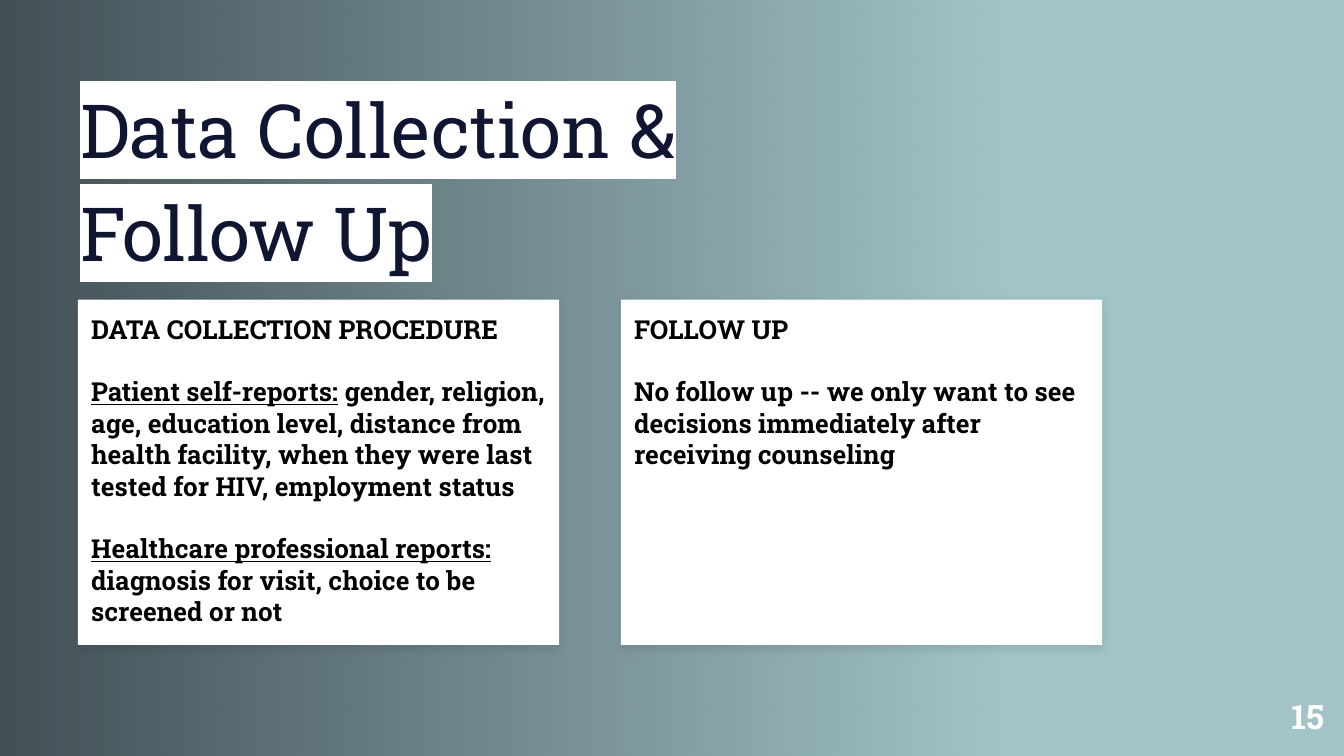
from dataclasses import dataclass

from lxml.etree import SubElement
from pptx import Presentation
from pptx.dml.color import RGBColor
from pptx.enum.shapes import MSO_SHAPE
from pptx.enum.text import MSO_ANCHOR, PP_ALIGN
from pptx.oxml import parse_xml
from pptx.oxml.ns import nsdecls, qn
from pptx.util import Inches, Pt


@dataclass(frozen=True)
class Theme:
    font: str = "Roboto Slab"
    background: str = "A2C4C9"
    shade: str = "000208"
    title: str = "101631"
    white: str = "FFFFFF"
    black: str = "000000"
    title_size: int = 40
    body_size: int = 14
    number_size: int = 18
    paragraph_gap: float = 16.8


theme = Theme()


def set_frame(sp, anchor):
    tf = sp.text_frame
    tf.word_wrap = True
    tf.vertical_anchor = anchor
    tf.margin_left = tf.margin_right = Inches(0.1)
    tf.margin_top = tf.margin_bottom = Inches(0.1)
    return tf


def add_run(p, text, size, color, bold=False, underline=False):
    r = p.add_run()
    r.text = text
    r.font.name = theme.font
    r.font.size = Pt(size)
    r.font.bold = bold
    r.font.underline = underline
    r.font.color.rgb = RGBColor.from_string(color)
    return r


prs = Presentation()
prs.slide_width = Inches(10)
prs.slide_height = Inches(10) * 9 // 16
s = prs.slides.add_slide(prs.slide_layouts[6])
s.background.fill.solid()
s.background.fill.fore_color.rgb = RGBColor.from_string(theme.background)

shade = s.shapes.add_shape(MSO_SHAPE.RECTANGLE, 0, 0, Inches(7.5), prs.slide_height)
shade.shadow.inherit = False
shade.line.fill.background()
shade.fill.gradient()
shade.fill.gradient_angle = 180
for stop in shade.fill.gradient_stops:
    stop.color.rgb = RGBColor.from_string(theme.shade)
for color, opacity in zip(shade.element.spPr.iter(qn("a:srgbClr")), (0, 60)):
    SubElement(color, qn("a:alpha"), val=str(opacity * 1000))

title = s.shapes.add_textbox(Inches(0.5), Inches(0.74), Inches(5), Inches(1.42))
p = set_frame(title, MSO_ANCHOR.BOTTOM).paragraphs[0]
p.line_spacing = 1.15
r = add_run(p, "Data Collection & Follow Up", theme.title_size, theme.title)
r._r.get_or_add_rPr().find(qn("a:solidFill")).addnext(parse_xml(
    f'<a:highlight {nsdecls("a")}><a:srgbClr val="{theme.white}"/></a:highlight>'))

number = s.shapes.add_textbox(Inches(9.38), Inches(5.02), Inches(0.57), Inches(0.61))
p = set_frame(number, MSO_ANCHOR.MIDDLE).paragraphs[0]
p.alignment = PP_ALIGN.RIGHT
add_run(p, "15", theme.number_size, theme.white, bold=True)

cards = [
    [
        ("", "DATA COLLECTION PROCEDURE"),
        ("Patient self-reports:", " gender, religion, age, education level, distance from "
         "health facility, when they were last tested for HIV, employment status"),
        ("Healthcare professional reports:",
         " diagnosis for visit, choice to be screened or not"),
    ],
    [
        ("", "FOLLOW UP"),
        ("", "No follow up -- we only want to see decisions immediately after "
         "receiving counseling"),
    ],
]
for column, paragraphs in enumerate(cards):
    card = s.shapes.add_shape(MSO_SHAPE.RECTANGLE, Inches(0.58 + 4.04 * column),
                              Inches(2.23), Inches(3.58), Inches(2.57))
    card.fill.solid()
    card.fill.fore_color.rgb = RGBColor.from_string(theme.white)
    card.line.fill.background()
    card.shadow.inherit = False
    shadow = SubElement(card.element.spPr.find(qn("a:effectLst")), qn("a:outerShdw"),
                        blurRad=str(Pt(4.5)), dist=str(Pt(1.5)), dir="5400000",
                        algn="bl", rotWithShape="0")
    color = SubElement(shadow, qn("a:srgbClr"), val=theme.black)
    SubElement(color, qn("a:alpha"), val="10000")

    tf = set_frame(card, MSO_ANCHOR.TOP)
    for i, (label, text) in enumerate(paragraphs):
        p = tf.add_paragraph() if i else tf.paragraphs[0]
        p.alignment = PP_ALIGN.LEFT
        p.space_before = Pt(theme.paragraph_gap if i else 0)
        if label:
            add_run(p, label, theme.body_size, theme.black, bold=True, underline=True)
        add_run(p, text, theme.body_size, theme.black, bold=True)

prs.save("out.pptx")
